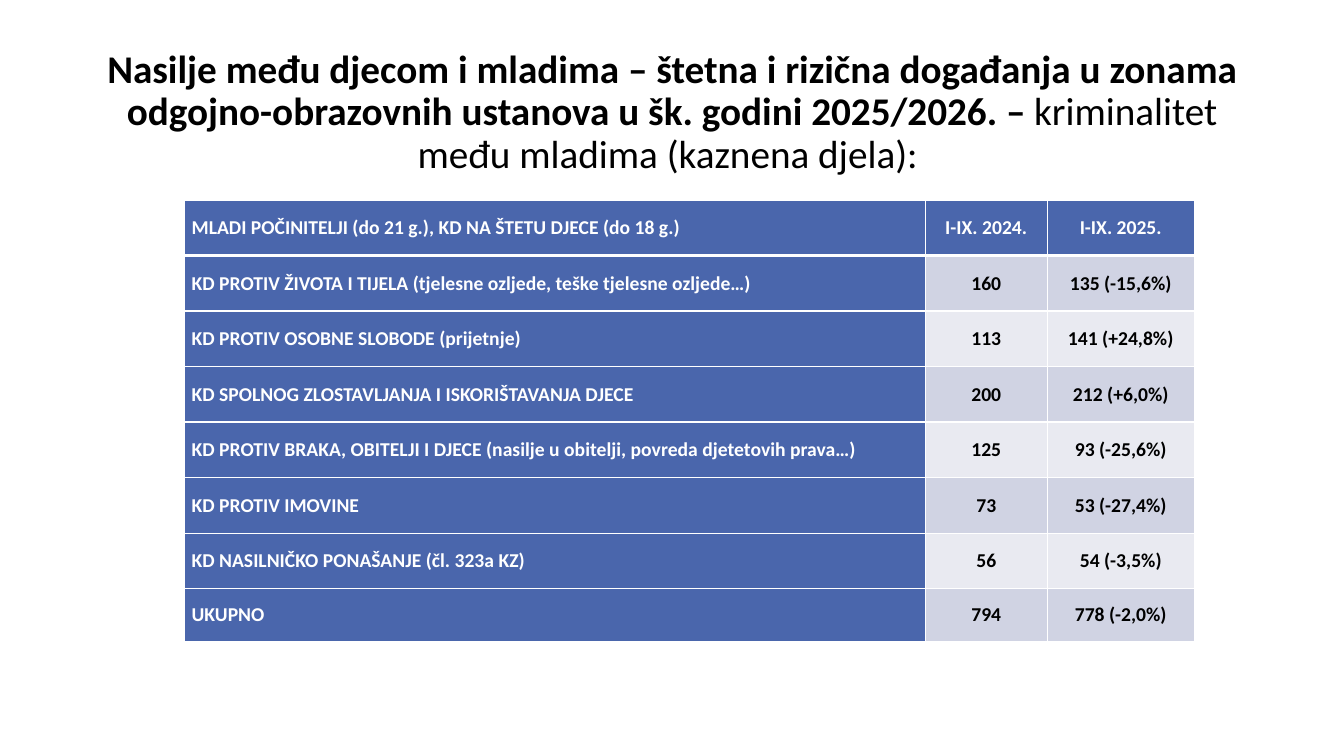
import pptx
import pptx.dml.color
import pptx.enum.text
import pptx.oxml
import pptx.oxml.ns
import pptx.util
from pptx.dml.color import RGBColor
from pptx.util import Cm

WHITE = RGBColor(0xFF, 0xFF, 0xFF)
BLACK = RGBColor(0x00, 0x00, 0x00)
BLUE = RGBColor(0x4A, 0x66, 0xAC)
BAND_DARK = RGBColor(0xD0, 0xD3, 0xE3)
BAND_LIGHT = RGBColor(0xE9, 0xEA, 0xF1)
FONT = "Calibri"

TITLE_PARTS = [
    ("Nasilje među djecom i mladima – štetna i rizična događanja u zonama "
     "odgojno-obrazovnih ustanova u šk. godini 2025/2026. – ", True),
    ("kriminalitet među mladima (kaznena djela): ", False),
]
OFFENCES = [
    ("MLADI POČINITELJI (do 21 g.), KD NA ŠTETU DJECE (do 18 g.)", "I-IX. 2024.", "I-IX. 2025."),
    ("KD PROTIV ŽIVOTA I TIJELA (tjelesne ozljede, teške tjelesne ozljede…)", "160", "135 (-15,6%)"),
    ("KD PROTIV OSOBNE SLOBODE (prijetnje)", "113", "141 (+24,8%)"),
    ("KD SPOLNOG ZLOSTAVLJANJA I ISKORIŠTAVANJA DJECE", "200", "212 (+6,0%)"),
    ("KD PROTIV BRAKA, OBITELJI I DJECE (nasilje u obitelji, povreda djetetovih prava…)",
     "125", "93 (-25,6%)"),
    ("KD PROTIV IMOVINE", "73", "53 (-27,4%)"),
    ("KD NASILNIČKO PONAŠANJE (čl. 323a KZ)", "56", "54 (-3,5%)"),
    ("UKUPNO", "794", "778 (-2,0%)"),
]


def format_span(span, size, color, bold):
    span.font.name = FONT
    span.font.size = pptx.util.Pt(size)
    span.font.color.rgb = color
    span.font.bold = bold


def place_title(page, left, top, width, height):
    box = page.shapes.title
    box.left, box.top, box.width, box.height = left, top, width, height
    frame = box.text_frame
    frame.word_wrap = True
    frame.auto_size = pptx.enum.text.MSO_AUTO_SIZE.NONE
    frame.vertical_anchor = pptx.enum.text.MSO_ANCHOR.MIDDLE
    para = frame.paragraphs[0]
    para.alignment = pptx.enum.text.PP_ALIGN.CENTER
    para.line_spacing = 0.9
    for text, bold in TITLE_PARTS:
        span = para.add_run()
        span.text = text
        format_span(span, 28, BLACK, bold)


def add_borders(cell, row):
    properties = cell._tc.get_or_add_tcPr()
    for side in "LRTB":
        width = 3 if (row, side) in ((0, "B"), (1, "T")) else 1
        properties.append(pptx.oxml.parse_xml(
            f'<a:ln{side} {pptx.oxml.ns.nsdecls("a")} w="{pptx.util.Pt(width)}">'
            f'<a:solidFill><a:srgbClr val="{WHITE}"/></a:solidFill></a:ln{side}>'))


def format_cell(cell, row, column, text):
    heading = row == 0 or column == 0
    add_borders(cell, row)
    cell.fill.solid()
    cell.fill.fore_color.rgb = BLUE if heading else BAND_DARK if row % 2 else BAND_LIGHT
    cell.margin_left = cell.margin_right = Cm(0.18)
    cell.margin_top = cell.margin_bottom = 0
    cell.vertical_anchor = pptx.enum.text.MSO_ANCHOR.MIDDLE
    cell.text_frame.text = text
    para = cell.text_frame.paragraphs[0]
    if column > 0:
        para.alignment = pptx.enum.text.PP_ALIGN.CENTER
    format_span(para.runs[0], 14, WHITE if heading else BLACK, True)


def place_table(page, left, top, width, height):
    year_widths = [Cm(3.07), Cm(3.71)]
    row_height = Cm(1.4)
    table = page.shapes.add_table(len(OFFENCES), 3, left, top, width, height).table
    for column, size in zip(table.columns, [width - sum(year_widths), *year_widths]):
        column.width = size
    for row in table.rows:
        row.height = row_height
    table.rows[len(OFFENCES) - 1].height = height - row_height * (len(OFFENCES) - 1)
    for row, texts in enumerate(OFFENCES):
        for column, text in enumerate(texts):
            format_cell(table.cell(row, column), row, column, text)


def main():
    deck = pptx.Presentation()
    deck.slide_width, deck.slide_height = Cm(33.87), Cm(19.05)
    page = deck.slides.add_slide(deck.slide_layouts[5])
    place_title(page, Cm(2.33), Cm(1.01), Cm(29.21), Cm(3.68))
    place_table(page, Cm(4.65), Cm(5.04), Cm(25.45), Cm(11.13))
    deck.save("out.pptx")


if __name__ == "__main__":
    main()
